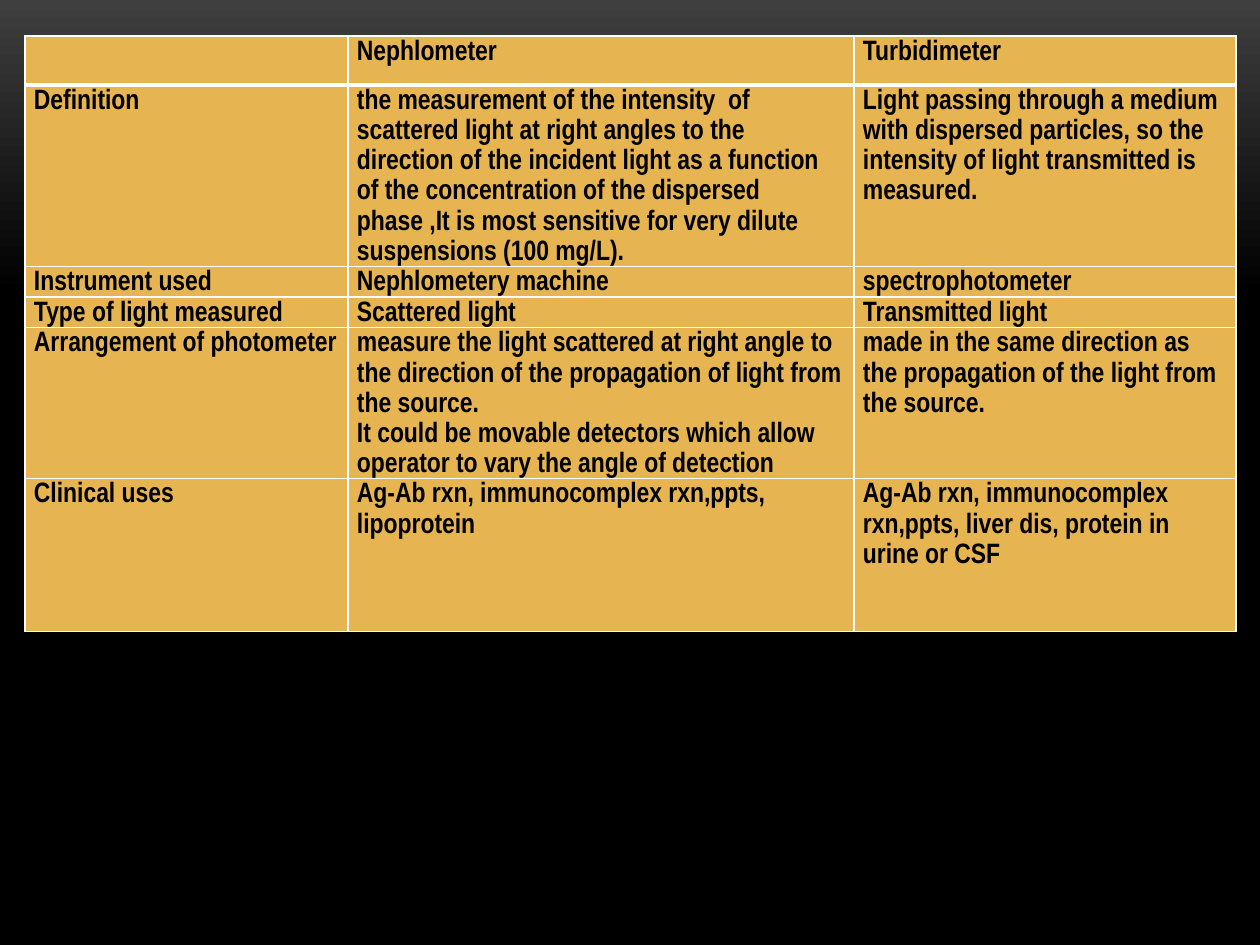
from dataclasses import dataclass

from lxml import etree
from pptx import Presentation
from pptx.dml.color import RGBColor
from pptx.enum.text import MSO_ANCHOR, PP_ALIGN
from pptx.oxml.ns import qn
from pptx.util import Emu, Pt

TOP = MSO_ANCHOR.TOP
LEFT = PP_ALIGN.LEFT
PX = 914400 // 126


@dataclass(frozen=True)
class Theme:
    font: str = "Arial Narrow"
    size: int = 16
    spacing: float = 1.15
    text: str = "000000"
    cell: str = "E6B450"
    border: str = "FFFFFF"
    glow: str = "3F3F3F"
    base: str = "000000"


class Deck:
    """Holds the theme and current slide, and draws each kind of element."""

    def __init__(self, prs, theme):
        self.theme = theme
        self.slide = prs.slides.add_slide(prs.slide_layouts[6])

    def background(self, fade_end):
        fill = self.slide.background.fill
        fill.gradient()
        fill.gradient_angle = 270
        stops = ((self.theme.glow, 0), (self.theme.base, fade_end))
        for stop, (color, position) in zip(fill.gradient_stops, stops):
            stop.color.rgb = RGBColor.from_string(color)
            stop.position = position

    def table(self, x, y, widths, heights, rows):
        frame = self.slide.shapes.add_table(
            len(rows), len(widths), Emu(x * PX), Emu(y * PX),
            Emu(sum(widths) * PX), Emu(sum(heights) * PX))
        table = frame.table
        for column, width in zip(table.columns, widths):
            column.width = Emu(width * PX)
        for row, height in zip(table.rows, heights):
            row.height = Emu(height * PX)
        for i, texts in enumerate(rows):
            for j, text in enumerate(texts):
                self.cell(table.cell(i, j), text,
                          top=3 if i == 1 else 1, bottom=3 if i == 0 else 1)

    def cell(self, cell, text, top, bottom):
        cell.margin_left = cell.margin_right = Emu(9 * PX)
        cell.margin_top = cell.margin_bottom = 0
        cell.vertical_anchor = TOP
        cell.fill.solid()
        cell.fill.fore_color.rgb = RGBColor.from_string(self.theme.cell)
        self.borders(cell, {"a:lnL": 1, "a:lnR": 1, "a:lnT": top, "a:lnB": bottom})
        tf = cell.text_frame
        tf.text = text
        for p in tf.paragraphs:
            p.alignment = LEFT
            p.line_spacing = self.theme.spacing
            p.font.name = self.theme.font
            p.font.size = Pt(self.theme.size)
            p.font.bold = True
            p.font.color.rgb = RGBColor.from_string(self.theme.text)

    def borders(self, cell, widths):
        tc_pr = cell._tc.get_or_add_tcPr()
        for i, (tag, width) in enumerate(widths.items()):
            ln = etree.Element(qn(tag), w=str(Pt(width)))
            fill = etree.SubElement(ln, qn("a:solidFill"))
            etree.SubElement(fill, qn("a:srgbClr"), val=self.theme.border)
            tc_pr.insert(i, ln)


ROWS = [
    ("", "Nephlometer", "Turbidimeter"),
    ("Definition",
     "the measurement of the intensity  of scattered light at right angles to the "
     "direction of the incident light as a function of the concentration of the "
     "dispersed phase ,It is most sensitive for very dilute suspensions (100 mg/L).",
     "Light passing through a medium with dispersed particles, so the intensity of "
     "light transmitted is measured."),
    ("Instrument used", "Nephlometery machine", "spectrophotometer"),
    ("Type of light measured", "Scattered light", "Transmitted light"),
    ("Arrangement of photometer",
     "measure the light scattered at right angle to the direction of the "
     "propagation of light from the source.\n"
     "It could be movable detectors which allow operator to vary the angle of detection",
     "made in the same direction as the propagation of the light from the source."),
    ("Clinical uses",
     "Ag-Ab rxn, immunocomplex rxn,ppts, lipoprotein",
     "Ag-Ab rxn, immunocomplex rxn,ppts, liver dis, protein in urine or CSF"),
]


def main():
    prs = Presentation()
    prs.slide_width = Emu(1260 * PX)
    prs.slide_height = Emu(945 * PX)
    deck = Deck(prs, Theme())
    deck.background(fade_end=0.31)
    deck.table(25, 36, widths=(323, 506, 382),
               heights=(49, 180, 31, 30, 151, 153), rows=ROWS)
    prs.save("out.pptx")


if __name__ == "__main__":
    main()
